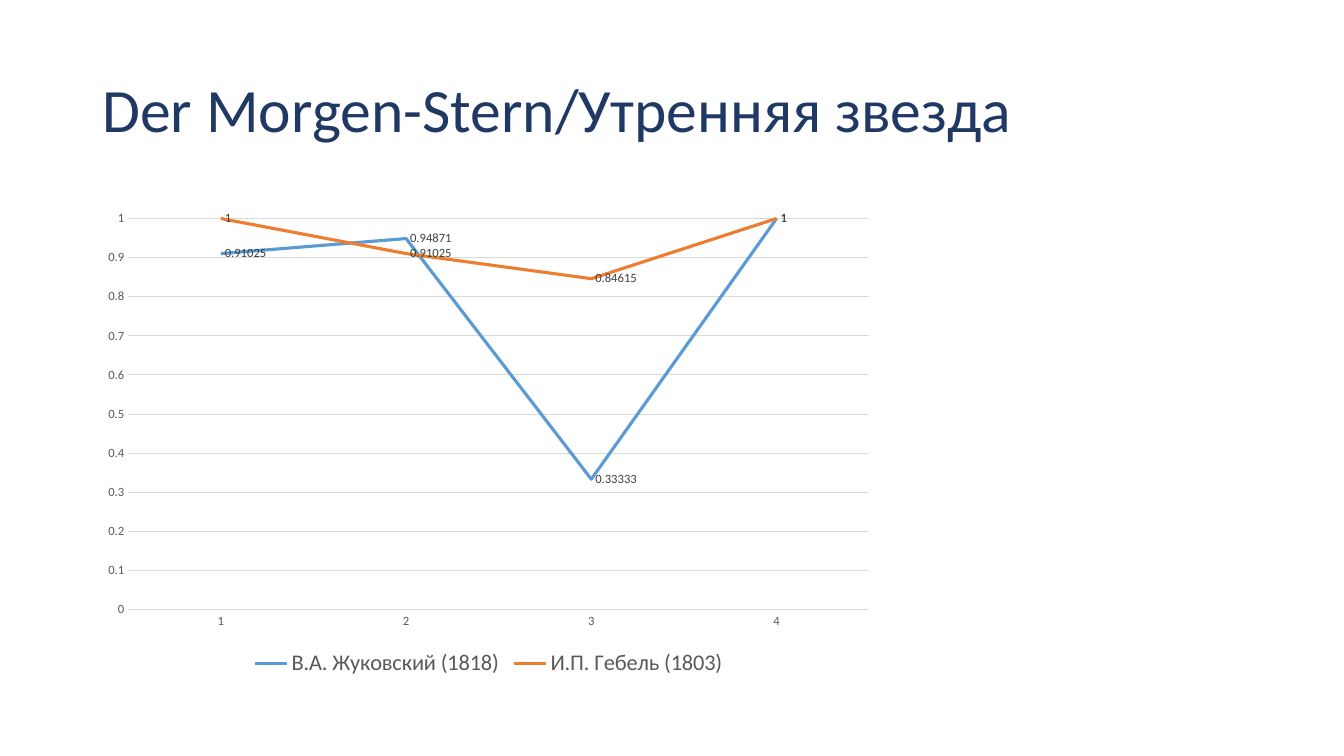
from dataclasses import dataclass

from pptx import Presentation
from pptx.chart.data import CategoryChartData
from pptx.dml.color import RGBColor
from pptx.enum.chart import XL_CHART_TYPE, XL_LABEL_POSITION, XL_LEGEND_POSITION, XL_TICK_MARK
from pptx.enum.text import MSO_ANCHOR, PP_ALIGN
from pptx.util import Pt

LINE_CHART = XL_CHART_TYPE.LINE
LABEL_RIGHT = XL_LABEL_POSITION.RIGHT
LEGEND_BOTTOM = XL_LEGEND_POSITION.BOTTOM
NO_TICK = XL_TICK_MARK.NONE
MIDDLE = MSO_ANCHOR.MIDDLE
LEFT = PP_ALIGN.LEFT

EMU_PER_PX = 9525
SLIDE_SIZE = (1280, 720)
TITLE_ONLY = 5


@dataclass(frozen=True)
class Theme:
    font: str = "Calibri"
    title: str = "203864"
    chart_text: str = "000000"
    axis_text: str = "595959"
    label_text: str = "404040"
    grid: str = "D9D9D9"
    series: tuple = ("5B9BD5", "ED7D31")
    title_size: int = 44
    legend_size: int = 16
    chart_size: int = 10
    small_size: int = 9
    grid_width: float = 0.75
    series_width: float = 2.25


def emu(*lengths):
    return [length * EMU_PER_PX for length in lengths]


def format_line(line, color, width):
    line.color.rgb = RGBColor.from_string(color)
    line.width = Pt(width)


class SlideBuilder:
    def __init__(self, presentation, theme):
        self.theme = theme
        self.slide = presentation.slides.add_slide(presentation.slide_layouts[TITLE_ONLY])

    def format_font(self, font, size, color):
        font.name = self.theme.font
        font.size = Pt(size)
        font.bold = False
        font.color.rgb = RGBColor.from_string(color)

    def set_text(self, text_frame, text, *, size, color, anchor=MIDDLE, align=LEFT, spacing=1.0):
        text_frame.word_wrap = True
        text_frame.vertical_anchor = anchor
        paragraph = text_frame.paragraphs[0]
        paragraph.alignment = align
        paragraph.line_spacing = spacing
        run = paragraph.add_run()
        run.text = text
        self.format_font(run.font, size, color)

    def title(self, text, left, top, width, height):
        shape = self.slide.shapes.title
        shape.left, shape.top, shape.width, shape.height = emu(left, top, width, height)
        self.set_text(shape.text_frame, text, size=self.theme.title_size,
                      color=self.theme.title, spacing=0.9)

    def line_chart(self, categories, series_values, left, top, width, height):
        theme = self.theme
        data = CategoryChartData()
        data.categories = categories
        for name, values in series_values.items():
            data.add_series(name, values)
        frame = self.slide.shapes.add_chart(LINE_CHART, *emu(left, top, width, height), data)
        chart = frame.chart
        chart.has_title = False
        self.format_font(chart.font, theme.chart_size, theme.chart_text)
        chart.has_legend = True
        chart.legend.position = LEGEND_BOTTOM
        chart.legend.include_in_layout = False
        self.format_font(chart.legend.font, theme.legend_size, theme.axis_text)
        self.format_axes(chart)
        chart.plots[0].vary_by_categories = False
        for series, color in zip(chart.plots[0].series, theme.series):
            self.format_series(series, color)

    def format_axes(self, chart):
        theme = self.theme
        for axis in (chart.category_axis, chart.value_axis):
            axis.major_tick_mark = axis.minor_tick_mark = NO_TICK
            self.format_font(axis.tick_labels.font, theme.small_size, theme.axis_text)
        format_line(chart.category_axis.format.line, theme.grid, theme.grid_width)
        value_axis = chart.value_axis
        value_axis.minimum_scale = 0
        value_axis.maximum_scale = 1
        value_axis.major_unit = 0.1
        value_axis.format.line.fill.background()
        value_axis.has_major_gridlines = True
        format_line(value_axis.major_gridlines.format.line, theme.grid, theme.grid_width)

    def format_series(self, series, color):
        series.smooth = False
        format_line(series.format.line, color, self.theme.series_width)
        labels = series.data_labels
        labels.show_value = True
        labels.position = LABEL_RIGHT
        self.format_font(labels.font, self.theme.small_size, self.theme.label_text)


def main():
    presentation = Presentation()
    presentation.slide_width, presentation.slide_height = emu(*SLIDE_SIZE)
    builder = SlideBuilder(presentation, Theme())
    builder.title("Der Morgen-Stern/Утренняя звезда", 88, 38, 1104, 139)
    builder.line_chart(
        ["1", "2", "3", "4"],
        {
            "В.А. Жуковский (1818)": (0.91025, 0.94871, 0.33333, 1),
            "И.П. Гебель (1803)": (1, 0.91025, 0.84615, 1),
        },
        88, 192, 755, 457,
    )
    presentation.save("out.pptx")


if __name__ == "__main__":
    main()
